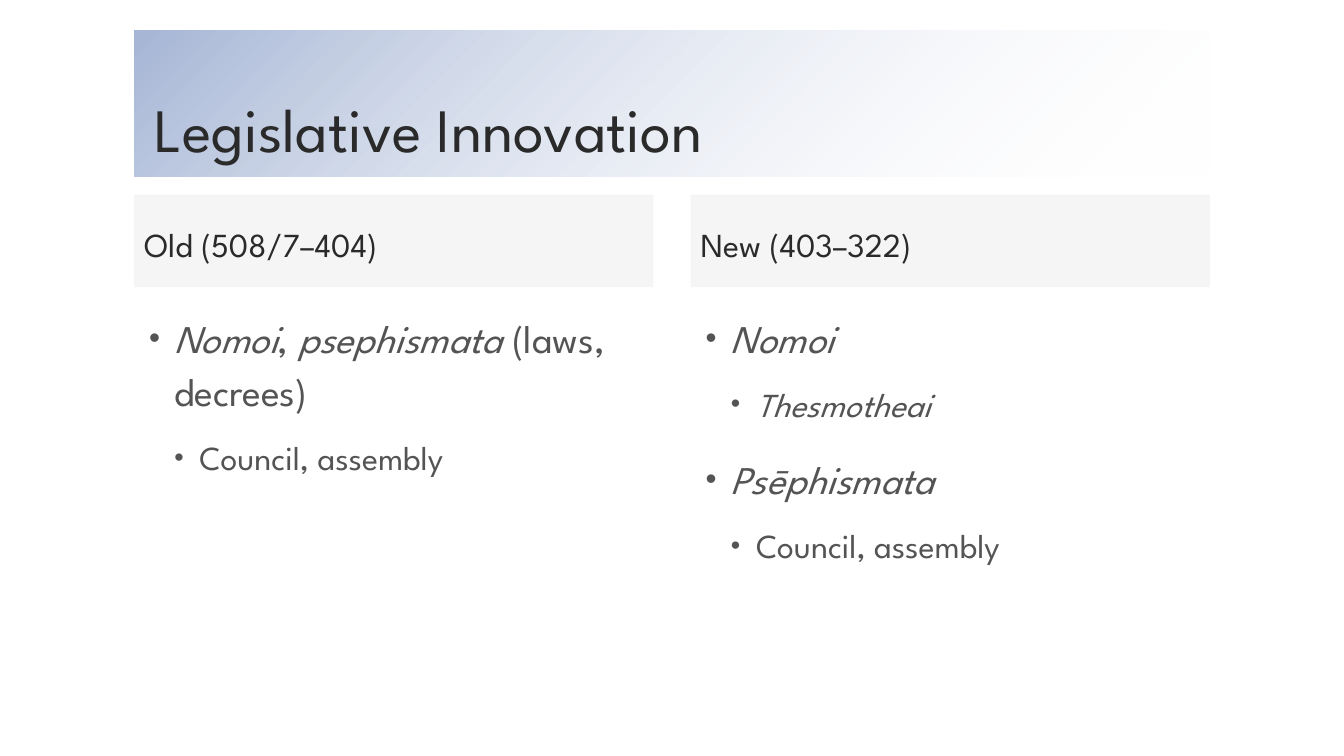
from lxml.etree import SubElement
from pptx import Presentation
from pptx.dml.color import RGBColor
from pptx.enum.shapes import MSO_SHAPE
from pptx.enum.text import MSO_ANCHOR as ANCHOR, MSO_AUTO_SIZE as AUTO, PP_ALIGN as ALIGN
from pptx.oxml.ns import qn
from pptx.util import Inches, Pt

# Content: each bullet is (level, [(text, italic), ...])
TITLE = "Legislative Innovation"
COLUMNS = [
    ("Old (508/7–404)", [
        (0, [("Nomoi", True), (", ", False), ("psephismata", True), (" (laws, decrees)", False)]),
        (1, [("Council, assembly", False)]),
    ]),
    ("New (403–322)", [
        (0, [("Nomoi", True)]),
        (1, [("Thesmotheai", True)]),
        (0, [("Psēphismata", True)]),
        (1, [("Council, assembly", False)]),
    ]),
]

# Style
FONT = "League Spartan"
COLORS = {"dark": "2A2A2A", "body": "545454", "blue": "A6B6D6", "white": "FFFFFF", "grey": "BFBFBF"}
LEVELS = [  # size, space before, left indent
    (28, 18, 0.3),
    (24, 12, 0.55),
]
HANGING = 0.25
LINE_SPACING = 1.14

# Layout in inches
LEFT, WIDTH = 1.33, 10.67
COL_W = 5.15
COL_STEP = WIDTH - COL_W
TITLE_Y, TITLE_H = 0.3, 1.45
HEAD_Y, HEAD_H = 1.93, 0.92
BODY_Y, BODY_H = 3, 3.58


def rgb(name):
    return RGBColor.from_string(COLORS[name])


def set_alpha(color_el, percent):
    SubElement(color_el, qn("a:alpha"), val=str(percent * 1000))


def add_run(p, text, size, color, italic=False):
    r = p.add_run()
    r.text = text
    r.font.name, r.font.size, r.font.italic = FONT, Pt(size), italic
    r.font.color.rgb = rgb(color)


def add_bullet(p, level):
    size, before, indent = LEVELS[level]
    p.level = level
    p.line_spacing, p.space_before = LINE_SPACING, Pt(before)
    pPr = p._p.get_or_add_pPr()
    pPr.set("marL", str(Inches(indent)))
    pPr.set("indent", str(-Inches(HANGING)))
    color = SubElement(pPr, qn("a:buClr"))
    SubElement(color, qn("a:srgbClr"), val=COLORS["body"])
    SubElement(pPr, qn("a:buSzPct"), val="80000")
    SubElement(pPr, qn("a:buFont"), typeface="Arial")
    SubElement(pPr, qn("a:buChar"), char="•")
    return size


def add_heading(s, x, text):
    sp = s.shapes.add_shape(MSO_SHAPE.RECTANGLE, Inches(x), Inches(HEAD_Y), Inches(COL_W), Inches(HEAD_H))
    sp.shadow.inherit = False
    sp.line.fill.background()
    sp.fill.solid()
    sp.fill.fore_color.rgb = rgb("grey")
    set_alpha(sp._element.spPr.find(".//" + qn("a:srgbClr")), 15)
    tf = sp.text_frame
    tf.word_wrap, tf.vertical_anchor = True, ANCHOR.MIDDLE
    p = tf.paragraphs[0]
    p.alignment, p.line_spacing = ALIGN.LEFT, LINE_SPACING
    add_run(p, text, 24, "dark")


def add_body(s, x, bullets):
    sp = s.shapes.add_textbox(Inches(x), Inches(BODY_Y), Inches(COL_W), Inches(BODY_H))
    tf = sp.text_frame
    tf.word_wrap = True
    for i, (level, runs) in enumerate(bullets):
        p = tf.add_paragraph() if i else tf.paragraphs[0]
        size = add_bullet(p, level)
        for text, italic in runs:
            add_run(p, text, size, "body", italic)


prs = Presentation()
prs.slide_width, prs.slide_height = Inches(13.33), Inches(7.5)
s = prs.slides.add_slide(prs.slide_layouts[5])

# Title on a band fading from blue to clear
title = s.shapes.title
title.left, title.top = Inches(LEFT), Inches(TITLE_Y)
title.width, title.height = Inches(WIDTH), Inches(TITLE_H)
title.fill.gradient()
title.fill.gradient_angle = 315
for stop, name, position in zip(title.fill.gradient_stops, ("blue", "white"), (0, 1)):
    stop.color.rgb = rgb(name)
    stop.position = position
set_alpha(title._element.spPr.findall(".//" + qn("a:srgbClr"))[-1], 0)
tf = title.text_frame
tf.auto_size, tf.word_wrap, tf.vertical_anchor = AUTO.NONE, True, ANCHOR.BOTTOM
tf.margin_left = tf.margin_right = Inches(0.2)
tf.margin_top = tf.margin_bottom = Inches(0.1)
p = tf.paragraphs[0]
p.alignment, p.line_spacing = ALIGN.LEFT, 0.9
add_run(p, TITLE, 44, "dark")

# Two columns: heading bar above bullets
for i, (heading, bullets) in enumerate(COLUMNS):
    x = LEFT + i * COL_STEP
    add_heading(s, x, heading)
    add_body(s, x, bullets)

prs.save("out.pptx")
